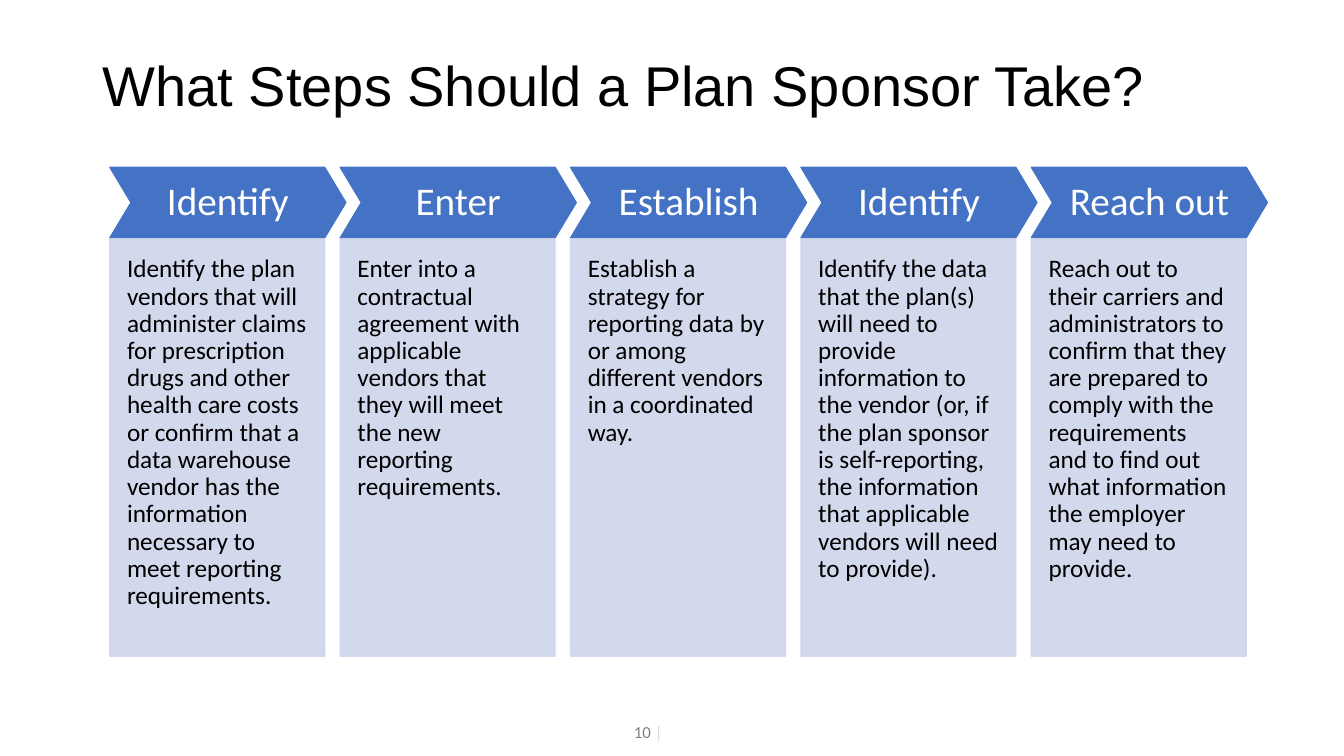
from lxml import etree
from pptx import Presentation
from pptx import util as u
from pptx.dml.color import RGBColor
from pptx.enum import shapes, text
from pptx.oxml.ns import qn

STEPS = [
    ("Identify", "Identify the plan vendors that will administer claims for prescription "
     "drugs and other health care costs or confirm that a data warehouse vendor has the "
     "information necessary to meet reporting requirements."),
    ("Enter", "Enter into a contractual agreement with applicable vendors that they will "
     "meet the new reporting requirements."),
    ("Establish", "Establish a strategy for reporting data by or among different vendors "
     "in a coordinated way."),
    ("Identify", "Identify the data that the plan(s) will need to provide information to "
     "the vendor (or, if the plan sponsor is self-reporting, the information that "
     "applicable vendors will need to provide)."),
    ("Reach out", "Reach out to their carriers and administrators to confirm that they are "
     "prepared to comply with the requirements and to find out what information the "
     "employer may need to provide."),
]


def rgb(value):
    return RGBColor.from_string(value)


class Deck:
    blue, pale, black, white = "4472C4", "CFD5EA", "000000", "FFFFFF"
    heading_font, body_font = "Arial", "Calibri"

    def __init__(self):
        self.prs = Presentation()
        self.prs.slide_width = u.Inches(13.33)
        self.prs.slide_height = u.Inches(7.5)
        self.s = self.prs.slides.add_slide(self.prs.slide_layouts[5])

    def style(self, r, size, color, font=None):
        r.font.name = font or self.body_font
        r.font.size = u.Pt(size)
        r.font.color.rgb = rgb(color)

    def set_text(self, sp, words, size, color, align, anchor, margins, font=None):
        """Fill a shape with one paragraph; margins are left, top, right, bottom."""
        tf = sp.text_frame
        tf.text = words
        tf.word_wrap = True
        tf.auto_size = text.MSO_AUTO_SIZE.NONE
        tf.vertical_anchor = anchor
        (tf.margin_left, tf.margin_top,
         tf.margin_right, tf.margin_bottom) = map(u.Inches, margins)
        p = tf.paragraphs[0]
        p.alignment = align
        p.line_spacing = 0.9
        self.style(p.runs[0], size, color, font)

    def title(self, words):
        sp = self.s.shapes.title
        sp.left, sp.top, sp.width, sp.height = map(u.Inches, (0.92, 0.15, 11.5, 1.45))
        self.set_text(sp, words, 40, self.black, text.PP_ALIGN.LEFT,
                      text.MSO_ANCHOR.MIDDLE, (0.1, 0.05, 0.1, 0.05), self.heading_font)

    def shape(self, kind, box, color, opacity=100):
        sp = self.s.shapes.add_shape(kind, *map(u.Inches, box))
        sp.shadow.inherit = False
        sp.fill.solid()
        sp.fill.fore_color.rgb = rgb(color)
        sp.line.color.rgb = rgb(color)
        sp.line.width = u.Pt(1)
        if opacity < 100:
            for clr in sp._element.spPr.iter(qn("a:srgbClr")):
                etree.SubElement(clr, qn("a:alpha"), val=str(opacity * 1000))
        return sp

    def step(self, left, name, detail):
        """Draw a detail panel with its chevron heading."""
        head = self.shape(shapes.MSO_SHAPE.CHEVRON, (left, 1.66, 2.34, 0.7), self.blue)
        head.adjustments[0] = 0.3
        self.set_text(head, name, 28, self.white, text.PP_ALIGN.CENTER,
                      text.MSO_ANCHOR.MIDDLE, (0.09,) * 4)
        panel = self.shape(shapes.MSO_SHAPE.RECTANGLE, (left, 2.37, 2.13, 4.14),
                           self.pale, 90)
        self.set_text(panel, detail, 18, self.black, text.PP_ALIGN.LEFT,
                      text.MSO_ANCHOR.TOP, (0.17, 0.17, 0.17, 0.34))

    def page_number(self, number):
        sp = self.s.shapes.add_textbox(*map(u.Inches, (3.67, 7.07, 3, 0.4)))
        self.set_text(sp, number, 12, "808080", text.PP_ALIGN.RIGHT,
                      text.MSO_ANCHOR.MIDDLE, (0.1, 0.05, 0.1, 0.05))
        r = sp.text_frame.paragraphs[0].add_run()
        r.text = " |"
        self.style(r, 12, "D9D9D9")


def main():
    deck = Deck()
    deck.title("What Steps Should a Plan Sponsor Take?")
    for i, (name, detail) in enumerate(STEPS):
        deck.step(1.09 + i * 2.285, name, detail)
    deck.page_number("10")
    deck.prs.save("out.pptx")


if __name__ == "__main__":
    main()
